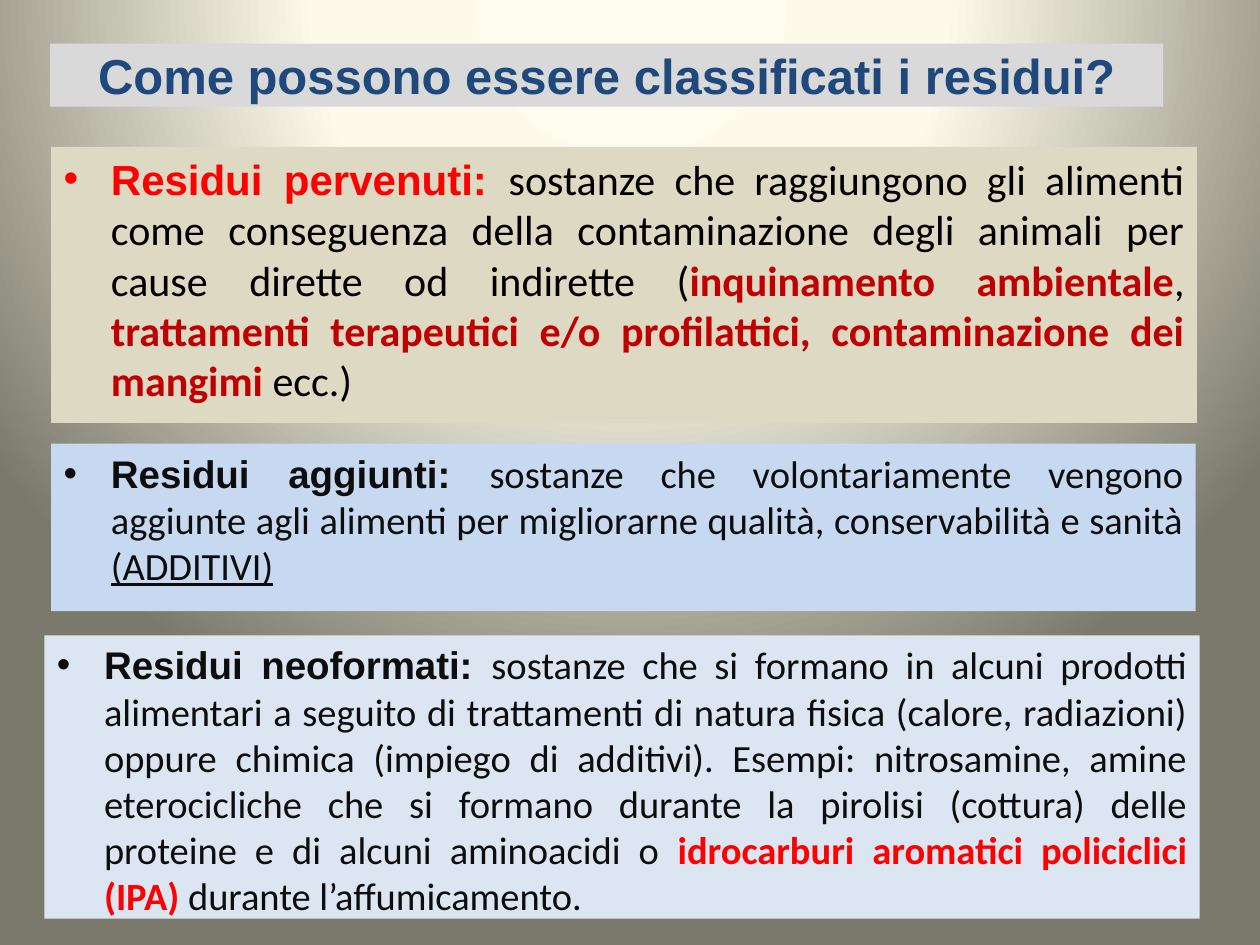
from pptx import Presentation
from pptx.dml.color import RGBColor
from pptx.enum.shapes import MSO_SHAPE
from pptx.enum.text import MSO_ANCHOR, PP_ALIGN
from pptx.oxml import parse_xml
from pptx.oxml.ns import nsdecls, qn
from pptx.util import Pt

NAVY = RGBColor(0x1F, 0x49, 0x7D)
GREY = RGBColor(0xD9, 0xD9, 0xD9)
SAND = RGBColor(0xDD, 0xD9, 0xC3)
BLUE = RGBColor(0xC6, 0xD9, 0xF1)
PALE_BLUE = RGBColor(0xDC, 0xE6, 0xF2)
BLACK = RGBColor(0x00, 0x00, 0x00)
INK = RGBColor(0x0D, 0x0D, 0x0D)
RED = RGBColor(0xFF, 0x00, 0x00)
DARK_RED = RGBColor(0xC0, 0x00, 0x00)

BACKDROP_STOPS = [(0, "FEFCEE"), (40, "FDFAEA"), (100, "7B796B")]


class SlideWriter:
    heading_font = "Arial"
    body_font = "Calibri"
    indent = Pt(27)

    def __init__(self, slide):
        self.slide = slide

    def backdrop(self, stops):
        """Circular gradient centred above the slide."""
        self.slide.background.fill.gradient()
        gradient = self.slide.element.find(".//" + qn("a:gradFill"))
        stop_xml = "".join(
            f'<a:gs pos="{percent * 1000}"><a:srgbClr val="{color}"/></a:gs>'
            for percent, color in stops)
        gradient.getparent().replace(gradient, parse_xml(
            f'<a:gradFill {nsdecls("a")} rotWithShape="1"><a:gsLst>{stop_xml}</a:gsLst>'
            '<a:path path="circle"><a:fillToRect l="50000" t="-80000" r="50000" b="180000"/>'
            '</a:path></a:gradFill>'))

    def panel(self, left, top, width, height, color, anchor=MSO_ANCHOR.TOP):
        """Filled box; returns its first paragraph."""
        box = self.slide.shapes.add_shape(
            MSO_SHAPE.RECTANGLE, Pt(left), Pt(top), Pt(width), Pt(height))
        box.shadow.inherit = False
        box.fill.solid()
        box.fill.fore_color.rgb = color
        box.line.fill.background()
        box.text_frame.word_wrap = True
        box.text_frame.vertical_anchor = anchor
        return box.text_frame.paragraphs[0]

    def span(self, para, text, size, color, font=body_font, bold=False, underline=None):
        span = para.add_run()
        span.text = text
        span.font.name = font
        span.font.size = Pt(size)
        span.font.color.rgb = color
        span.font.bold = bold
        span.font.underline = underline

    def title(self, text, size, *area):
        para = self.panel(*area, GREY, MSO_ANCHOR.MIDDLE)
        para.alignment = PP_ALIGN.CENTER
        self.span(para, text, size, NAVY, self.heading_font, bold=True)

    def definition(self, area, fill, size, term, term_color, spans):
        """Bulleted, justified paragraph: a bold term and its explanation."""
        para = self.panel(*area, fill)
        para.alignment = PP_ALIGN.JUSTIFY
        properties = para._p.get_or_add_pPr()
        properties.set("marL", str(self.indent))
        properties.set("indent", str(-self.indent))
        properties.append(parse_xml(f'<a:buFont {nsdecls("a")} typeface="Arial"/>'))
        properties.append(parse_xml(f'<a:buChar {nsdecls("a")} char="•"/>'))
        self.span(para, term, size, term_color, self.heading_font, bold=True)
        for text, color, style in spans:
            self.span(para, text, size, color, **style)


def main():
    deck = Presentation()
    deck.slide_width, deck.slide_height = Pt(720), Pt(540)
    writer = SlideWriter(deck.slides.add_slide(deck.slide_layouts[6]))
    plain, bold, underlined = {}, {"bold": True}, {"underline": True}

    # Background and title
    writer.backdrop(BACKDROP_STOPS)
    writer.title("Come possono essere classificati i residui?", 28, 28.6, 25, 636, 36)

    # Residues that reach the food
    writer.definition((29.3, 84, 654.7, 157.7), SAND, 24, "Residui pervenuti: ", RED, [
        ("sostanze che raggiungono gli alimenti come conseguenza della contaminazione "
         "degli animali per cause dirette od indirette (", BLACK, plain),
        ("inquinamento ambientale", DARK_RED, bold),
        (", ", BLACK, plain),
        ("trattamenti terapeutici e/o profilattici, contaminazione dei mangimi",
         DARK_RED, bold),
        (" ecc.)", BLACK, plain),
    ])

    # Residues added on purpose
    writer.definition((29.3, 253.5, 654, 95.8), BLUE, 22, "Residui aggiunti: ", INK, [
        ("sostanze che volontariamente vengono aggiunte agli alimenti per migliorarne "
         "qualità, conservabilità e sanità ", INK, plain),
        ("(ADDITIVI)", INK, underlined),
    ])

    # Residues formed in processing
    writer.definition((25.4, 363, 660.2, 162), PALE_BLUE, 22, "Residui neoformati: ", INK, [
        ("sostanze che si formano in alcuni prodotti alimentari a seguito di trattamenti "
         "di natura fisica (calore, radiazioni) oppure chimica (impiego di additivi). "
         "Esempi: nitrosamine, amine eterocicliche che si formano durante la pirolisi "
         "(cottura) delle proteine e di alcuni aminoacidi o ", INK, plain),
        ("idrocarburi aromatici policiclici (IPA) ", RED, bold),
        ("durante l’affumicamento.", INK, plain),
    ])

    deck.save("out.pptx")


if __name__ == "__main__":
    main()
